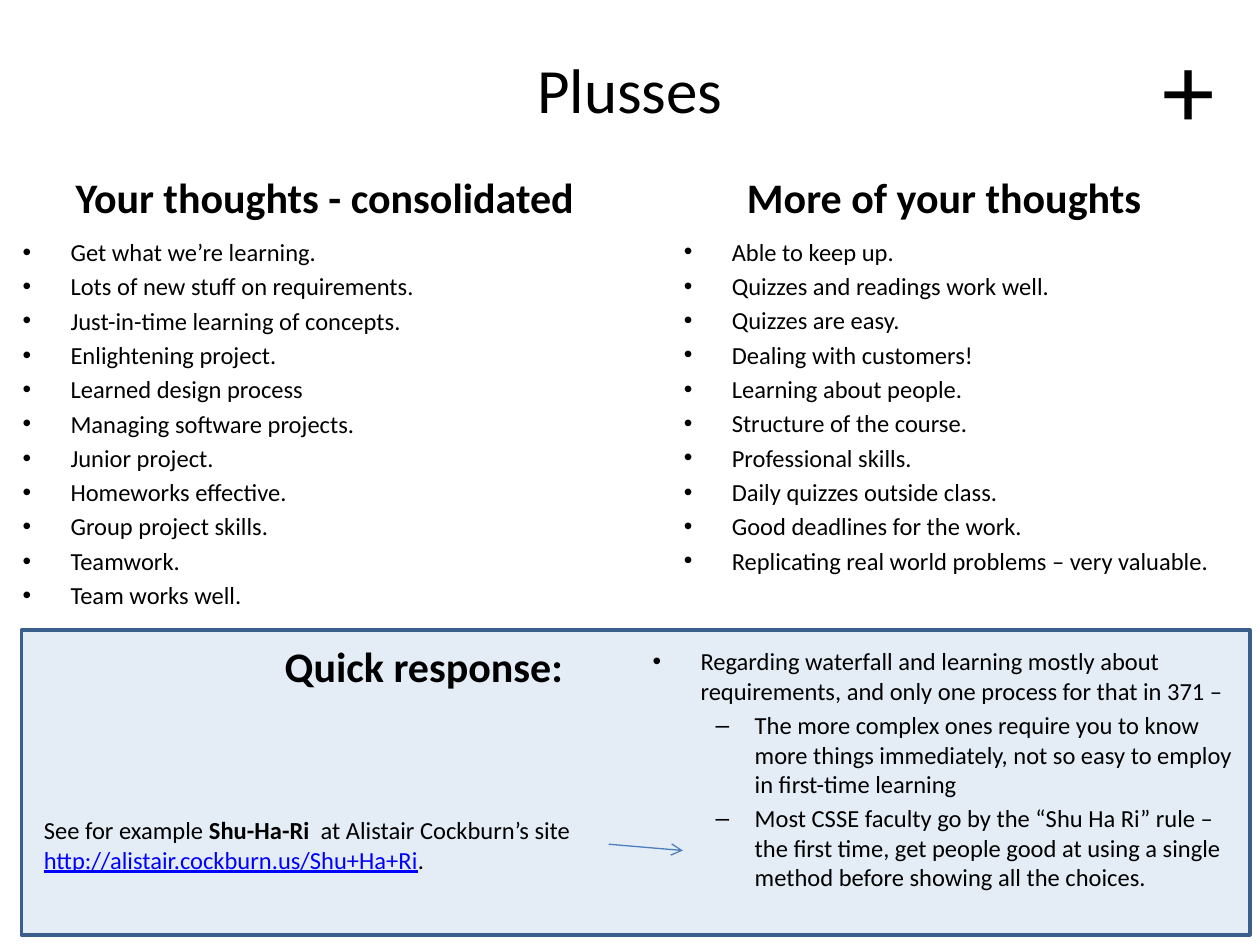
from typing import NamedTuple

from lxml.etree import SubElement
from pptx import Presentation
from pptx.dml.color import RGBColor
from pptx.enum.dml import MSO_LINE
from pptx.enum.shapes import MSO_CONNECTOR, MSO_SHAPE
from pptx.enum.text import MSO_ANCHOR, MSO_AUTO_SIZE, PP_ALIGN
from pptx.oxml.ns import qn
from pptx.util import Inches, Pt

FONT = "Calibri"
COLORS = {"text": "000000", "link": "0000FF", "panel": "4F81BD",
          "border": "3A5F8C", "arrow": "4B7EBC"}
BULLETS = [("•", 0.38, 0.38), ("–", 0.81, 0.31)]  # mark, margin, hanging indent


class Area(NamedTuple):
    left: float
    top: float
    width: float
    height: float

    def lengths(self):
        return [Inches(value) for value in self]


class Heading(NamedTuple):
    text: str
    area: Area
    placeholder: int | None = None


class BulletList(NamedTuple):
    items: list[tuple[int, str]]  # level, text
    area: Area
    placeholder: int | None = None


HEADINGS = [
    Heading("Your thoughts - consolidated", Area(0.5, 1.17, 4.42, 0.64), 1),
    Heading("Quick response:", Area(2.16, 4.83, 3.51, 0.7), 3),
    Heading("More of your thoughts", Area(5.83, 1.17, 3.51, 0.64)),
]
THOUGHTS = [
    "Get what we’re learning.", "Lots of new stuff on requirements.",
    "Just-in-time learning of concepts.", "Enlightening project.",
    "Learned design process", "Managing software projects.",
    "Junior project.", "Homeworks effective.", "Group project skills.",
    "Teamwork.", "Team works well.",
]
MORE_THOUGHTS = [
    "Able to keep up.", "Quizzes and readings work well.",
    "Quizzes are easy.", "Dealing with customers!",
    "Learning about people.", "Structure of the course.",
    "Professional skills.", "Daily quizzes outside class.",
    "Good deadlines for the work.",
    "Replicating real world problems – very valuable.",
]
RESPONSES = [
    (0, "Regarding waterfall and learning mostly about requirements, "
        "and only one process for that in 371 –"),
    (1, "The more complex ones require you to know more things immediately, "
        "not so easy to employ in first-time learning"),
    (1, "Most CSSE faculty go by the “Shu Ha Ri” rule – the first time, get "
        "people good at using a single method before showing all the choices."),
]
LISTS = [
    BulletList([(0, text) for text in THOUGHTS], Area(0.08, 1.83, 5.17, 3.93), 2),
    BulletList(RESPONSES, Area(5.08, 5.08, 4.87, 2.3), 4),
    BulletList([(0, text) for text in MORE_THOUGHTS], Area(5.33, 1.83, 4.46, 2.92)),
]


def color(name: str) -> RGBColor:
    return RGBColor.from_string(COLORS[name])


def style(para, size: float, bold: bool = False) -> None:
    for span in para.runs:
        span.font.name = FONT
        span.font.size = Pt(size)
        span.font.bold = bold
        span.font.color.rgb = color("text")


def text_area(page, area: Area, placeholder: int | None = None,
              anchor=MSO_ANCHOR.TOP):
    """Return the frame of a moved placeholder, or of a new text box."""
    if placeholder is None:
        box = page.shapes.add_textbox(*area.lengths())
    else:
        box = page.placeholders[placeholder]
        box.left, box.top, box.width, box.height = area.lengths()
    frame = box.text_frame
    frame.word_wrap = True
    frame.auto_size = MSO_AUTO_SIZE.NONE
    frame.vertical_anchor = anchor
    return frame


def add_heading(page, heading: Heading) -> None:
    frame = text_area(page, heading.area, heading.placeholder, MSO_ANCHOR.BOTTOM)
    frame.text = heading.text
    frame.paragraphs[0].space_before = Pt(0)
    style(frame.paragraphs[0], 24, bold=True)


def add_bullet(para, level: int) -> None:
    mark, margin, hanging = BULLETS[level]
    para.level = level
    props = para._p.get_or_add_pPr()
    props.set("marL", str(Inches(margin)))
    props.set("indent", str(-Inches(hanging)))
    SubElement(props, qn("a:buFont"), typeface="Arial")
    SubElement(props, qn("a:buChar"), char=mark)


def add_list(page, content: BulletList) -> None:
    frame = text_area(page, content.area, content.placeholder)
    frame.text = "\n".join(text for _, text in content.items)
    for index, (para, (level, _)) in enumerate(zip(frame.paragraphs, content.items)):
        para.space_before = Pt(2.8 if index else 0)
        add_bullet(para, level)
        style(para, 14)


def add_panel(page) -> None:
    """Draw the translucent response panel behind all text."""
    panel = page.shapes.add_shape(MSO_SHAPE.RECTANGLE,
                                  *Area(0.17, 5, 9.75, 2.42).lengths())
    panel.shadow.inherit = False
    panel.fill.solid()
    panel.fill.fore_color.rgb = color("panel")
    fill_color = panel.element.spPr.find(".//" + qn("a:srgbClr"))
    SubElement(fill_color, qn("a:alpha"), val="15000")
    panel.line.color.rgb = color("border")
    panel.line.width = Pt(2)
    page.shapes.element.insert(2, panel.element)


def add_reference(page) -> None:
    para = text_area(page, Area(0.25, 6.42, 4.83, 0.57)).paragraphs[0]
    for text in ("See for example ", "Shu-Ha-Ri ", " at Alistair Cockburn’s site ",
                 "http://alistair.cockburn.us/Shu+Ha+Ri", "."):
        para.add_run().text = text
    style(para, 14)
    _, term, _, address, _ = para.runs
    term.font.bold = True
    address.font.underline = True
    address.font.color.rgb = color("link")


def add_arrow(page) -> None:
    arrow = page.shapes.add_connector(
        MSO_CONNECTOR.STRAIGHT, Inches(4.83), Inches(6.7), Inches(5.42), Inches(6.75))
    arrow.line.color.rgb = color("arrow")
    arrow.line.width = Pt(0.75)
    arrow.line.dash_style = MSO_LINE.SOLID
    SubElement(arrow.line._get_or_add_ln(), qn("a:tailEnd"), type="arrow")
    SubElement(arrow.element.spPr, qn("a:effectLst"))


def main() -> None:
    deck = Presentation()
    deck.slide_width, deck.slide_height = Inches(10), Inches(7.5)
    page = deck.slides.add_slide(deck.slide_layouts.get_by_name("Comparison"))
    add_panel(page)

    title = text_area(page, Area(0.5, 0.08, 9, 1.25), 0, MSO_ANCHOR.MIDDLE)
    title.text = "Plusses"
    title.paragraphs[0].alignment = PP_ALIGN.CENTER
    style(title.paragraphs[0], 36)

    for heading in HEADINGS:
        add_heading(page, heading)
    for content in LISTS:
        add_list(page, content)
    add_reference(page)
    add_arrow(page)

    plus = text_area(page, Area(9.13, 0.14, 0.62, 1.11))
    plus.word_wrap = False
    plus.text = "+"
    style(plus.paragraphs[0], 60)
    deck.save("out.pptx")


if __name__ == "__main__":
    main()
